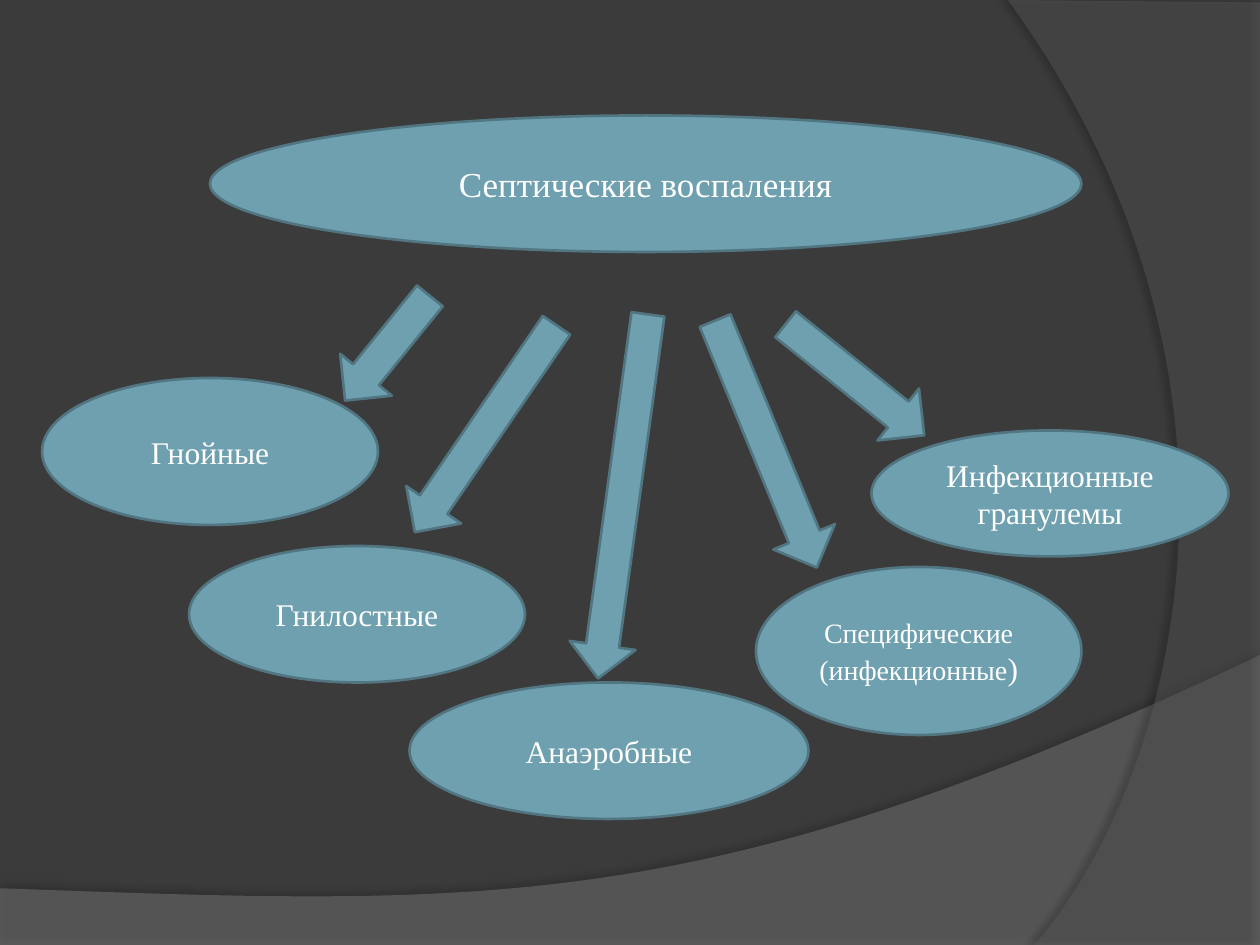
from lxml import etree
from pptx import Presentation
from pptx.dml.color import RGBColor
from pptx.enum.shapes import MSO_SHAPE as Shape
from pptx.enum.text import MSO_ANCHOR as Anchor, PP_ALIGN as Align
from pptx.oxml.ns import qn
from pptx.util import Pt

COLORS = {
    "background": "3B3B3B",
    "hill": "7F7F7F",
    "arc": "5E5E5E",
    "fill": "6EA0B0",
    "outline": "517682",
    "text": "FFFFFF",
    "shadow": "000000",
}
FONT = "Times New Roman"
WIDTH, HEIGHT = 720, 540
ARROW_THICKNESS = 38

# Left, top, width, height, then runs of (text, size)
TOPIC = (120, 66, 498, 78, [("Септические воспаления", 20)])
KINDS = [
    (24, 216, 192, 84, [("Гнойные", 18)]),
    (498, 246, 204, 72, [("Инфекционные гранулемы", 18)]),
    (432, 324, 186, 96, [("Специфические (инфекционные", 16), (")", 18)]),
    (108, 312, 192, 78, [("Гнилостные", 18)]),
    (234, 390, 228, 78, [("Анаэробные", 18)]),
]
# Centre x, centre y, length, rotation
DOWN_ARROWS = [(356, 283.7, 210, 7.8), (277.5, 245, 143.3, 34.4)]
RIGHT_ARROWS = [
    (437.7, 253.8, 152.6, 67.6),
    (488.5, 217, 101.5, 38.7),
    (221.4, 199, 77, 129),
]


def rgb(name):
    return RGBColor.from_string(COLORS[name])


def bezier(start, first, second, end, steps=60):
    """Points along a cubic curve, both ends included."""
    points = []
    for step in range(steps + 1):
        t = step / steps
        weights = ((1 - t) ** 3, 3 * t * (1 - t) ** 2, 3 * t * t * (1 - t), t ** 3)
        points.append(tuple(
            sum(weight * value for weight, value in zip(weights, values))
            for values in zip(start, first, second, end)
        ))
    return points


class SlideBuilder:
    def __init__(self, deck):
        self.slide = deck.slides.add_slide(deck.slide_layouts[6])
        background = self.slide.background.fill
        background.solid()
        background.fore_color.rgb = rgb("background")

    def paint(self, shape, color):
        shape.shadow.inherit = False
        shape.fill.solid()
        shape.fill.fore_color.rgb = rgb(color)

    def styled(self, preset, left, top, width, height):
        shape = self.slide.shapes.add_shape(
            preset, Pt(left), Pt(top), Pt(width), Pt(height))
        self.paint(shape, "fill")
        shape.line.color.rgb = rgb("outline")
        shape.line.width = Pt(1.5)
        return shape

    def ellipse(self, left, top, width, height, runs):
        shape = self.styled(Shape.OVAL, left, top, width, height)
        frame = shape.text_frame
        frame.word_wrap = True
        frame.vertical_anchor = Anchor.MIDDLE
        para = frame.paragraphs[0]
        para.alignment = Align.CENTER
        for text, size in runs:
            span = para.add_run()
            span.text = text
            span.font.name = FONT
            span.font.size = Pt(size)
            span.font.color.rgb = rgb("text")

    def arrow(self, preset, center_x, center_y, length, rotation):
        width, height = length, ARROW_THICKNESS
        if preset == Shape.DOWN_ARROW:
            width, height = height, width
        shape = self.styled(
            preset, center_x - width / 2, center_y - height / 2, width, height)
        shape.rotation = rotation

    def backdrop(self, points, color, opacity, shadow_opacity, distance, direction):
        """Translucent outline with a soft shadow; opacities are percentages."""
        corners = [(Pt(x), Pt(y)) for x, y in points]
        builder = self.slide.shapes.build_freeform(*corners[0], scale=1.0)
        builder.add_line_segments(corners[1:], close=True)
        shape = builder.convert_to_shape()
        self.paint(shape, color)
        shape.line.fill.background()
        properties = shape._element.spPr
        fill_color = properties.find(qn("a:solidFill"))[0]
        self.add_alpha(fill_color, opacity)
        shadow = etree.SubElement(
            properties.find(qn("a:effectLst")), qn("a:outerShdw"),
            blurRad=str(Pt(4)), dist=str(Pt(distance)),
            dir=str(direction * 60000), algn="ctr", rotWithShape="0")
        shadow_color = etree.SubElement(
            shadow, qn("a:srgbClr"), val=COLORS["shadow"])
        self.add_alpha(shadow_color, shadow_opacity)

    def add_alpha(self, color, percent):
        etree.SubElement(color, qn("a:alpha"), val=str(percent * 1000))


def main():
    deck = Presentation()
    deck.slide_width, deck.slide_height = Pt(WIDTH), Pt(HEIGHT)
    page = SlideBuilder(deck)

    hill = [(0, HEIGHT), (WIDTH, HEIGHT)] + bezier(
        (WIDTH, 374.4), (402.5, 524.9), (281.5, 517.7), (0, 507.6))
    page.backdrop(hill, "hill", 45, 35, 3.5, 270)
    arc = [(WIDTH, 1.4), (WIDTH, HEIGHT)] + bezier(
        (591.1, HEIGHT), (673.2, 445.7), (733, 216), (576, 0))
    page.backdrop(arc, "arc", 40, 45, 4, 180)

    for ellipse in [TOPIC] + KINDS:
        page.ellipse(*ellipse)
    for arrow in DOWN_ARROWS:
        page.arrow(Shape.DOWN_ARROW, *arrow)
    for arrow in RIGHT_ARROWS:
        page.arrow(Shape.RIGHT_ARROW, *arrow)

    deck.save("out.pptx")


if __name__ == "__main__":
    main()
